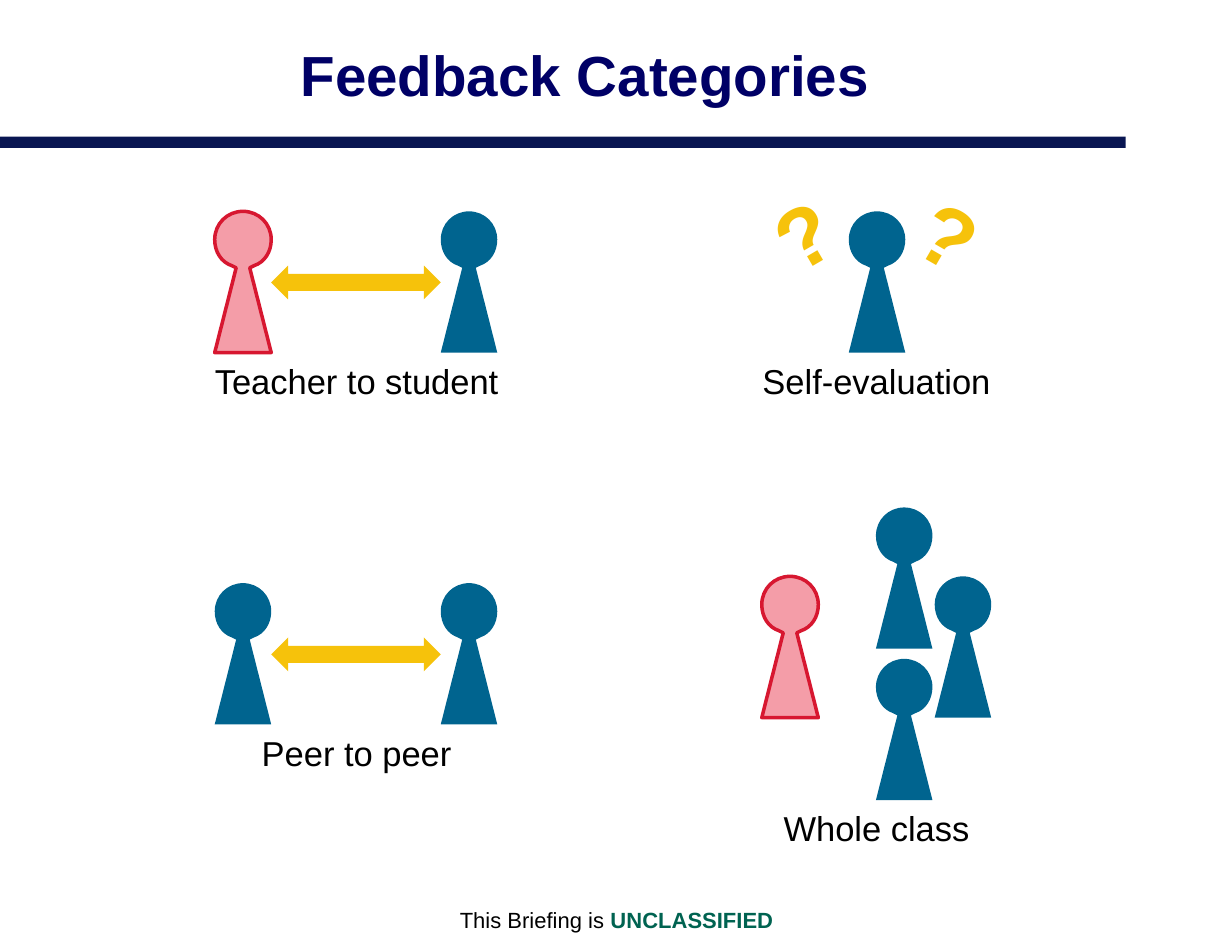
import lxml.etree
import pptx
import pptx.util
import pptx.dml.color
import pptx.enum.shapes
import pptx.enum.text
import pptx.oxml.ns

Inches = pptx.util.Inches
Pt = pptx.util.Pt
qn = pptx.oxml.ns.qn
SHAPE = pptx.enum.shapes.MSO_SHAPE
CENTER = pptx.enum.text.PP_ALIGN.CENTER

COLORS = {
    "navy": "000066",
    "bar": "091652",
    "gold": "F6C20B",
    "blue": "00648F",
    "pink": "F49DA8",
    "red": "D71730",
    "green": "006351",
    "black": "000000",
}

# Corners of a pawn, clockwise from the top of the head
PAWN = [(0.25, 0), (0.5, 0.25), (0.35, 0.48), (0.31, 0.5), (0.5, 1.25),
        (0, 1.25), (0.19, 0.5), (0.15, 0.48), (0, 0.25), (0.25, 0)]
# Control points of the curved steps of the head
CURVES = {
    0: [(0.39, 0), (0.5, 0.11)],
    1: [(0.5, 0.36), (0.44, 0.45)],
    7: [(0.06, 0.45), (0, 0.36)],
    8: [(0, 0.11), (0.11, 0)],
}


def color(name):
    return pptx.dml.color.RGBColor.from_string(COLORS[name])


def set_font(font, size, name, bold=False):
    font.name = "Arial"
    font.size = Pt(size)
    font.bold = bold
    font.color.rgb = color(name)


def paint(shape, fill, line=None):
    shape.shadow.inherit = False
    shape.fill.solid()
    shape.fill.fore_color.rgb = color(fill)
    if line:
        shape.line.color.rgb = color(line)
        shape.line.width = Pt(2.25)
    else:
        shape.line.fill.background()


def add_block(shapes, kind, left, top, width, height, fill):
    shape = shapes.add_shape(
        kind, Inches(left), Inches(top), Inches(width), Inches(height))
    paint(shape, fill)


def add_text(shapes, left, top, width, height, wrap=True):
    box = shapes.add_textbox(
        Inches(left), Inches(top), Inches(width), Inches(height))
    box.text_frame.word_wrap = wrap
    para = box.text_frame.paragraphs[0]
    para.alignment = CENTER
    return box, para


def add_label(shapes, left, top, text):
    para = add_text(shapes, left, top, 2.91, 0.47)[1]
    para.text = text
    set_font(para.font, 22, "black")


def bend(shape):
    # Turn the straight steps of the head into curves
    steps = list(shape._element.iter(qn("a:lnTo")))
    for index, points in CURVES.items():
        step = steps[index]
        curve = lxml.etree.Element(qn("a:cubicBezTo"))
        for x, y in points:
            lxml.etree.SubElement(
                curve, qn("a:pt"), x=str(Inches(x)), y=str(Inches(y)))
        curve.append(step[0])
        step.getparent().replace(step, curve)


def add_pawn(shapes, left, top, fill="blue", line=None):
    points = [(Inches(left + x), Inches(top + y)) for x, y in PAWN]
    pen = shapes.build_freeform(*points[0])
    pen.add_line_segments(points[1:], close=True)
    shape = pen.convert_to_shape()
    bend(shape)
    paint(shape, fill, line)


def add_teacher(shapes, left, top):
    add_pawn(shapes, left, top, "pink", "red")


def add_pair(shapes, top, first, text):
    add_block(shapes, SHAPE.LEFT_RIGHT_ARROW, 2.4, top + 0.48, 1.5, 0.3, "gold")
    add_pawn(shapes, 3.9, top)
    first(shapes, 1.9, top)
    add_label(shapes, 1.7, top + 1.27, text)


def add_query(shapes, left, top, turn):
    box, para = add_text(shapes, left, top, 0.66, 1.01, wrap=False)
    box.rotation = turn
    para.text = "?"
    set_font(para.font, 54, "gold", True)


def add_title(slide, text):
    title = slide.shapes.title
    title.left, title.top = Inches(1.13), Inches(0)
    title.width, title.height = Inches(8.09), Inches(1.3)
    title.text_frame.vertical_anchor = pptx.enum.text.MSO_ANCHOR.MIDDLE
    para = title.text_frame.paragraphs[0]
    para.text = text
    para.alignment = CENTER
    set_font(para.font, 36, "navy", True)


def add_footer(shapes):
    para = add_text(shapes, 2.75, 7.97, 5.41, 0.33)[1]
    for text, name, bold in (("This Briefing is ", "black", False),
                             ("UNCLASSIFIED", "green", True)):
        run = para.add_run()
        run.text = text
        set_font(run.font, 14, name, bold)


def main():
    deck = pptx.Presentation()
    deck.slide_width, deck.slide_height = Inches(10.9), Inches(8.3)
    slide = deck.slides.add_slide(deck.slide_layouts[5])
    shapes = slide.shapes

    # Frame of the slide
    add_block(shapes, SHAPE.RECTANGLE, 0, 1.21, 9.96, 0.1, "bar")
    add_footer(shapes)
    add_title(slide, "Feedback Categories")

    # Pairs on the left
    for top, first, text in ((1.87, add_teacher, "Teacher to student"),
                             (5.16, add_pawn, "Peer to peer")):
        add_pair(shapes.add_group_shape().shapes, top, first, text)

    # Student alone
    solo = shapes.add_group_shape().shapes
    add_label(solo, 6.3, 3.14, "Self-evaluation")
    add_pawn(solo, 7.51, 1.87)
    add_query(solo, 6.78, 1.56, -30.2)
    add_query(solo, 8.07, 1.57, 30)

    # Teacher with the class
    group = shapes.add_group_shape().shapes
    add_pawn(group, 7.75, 4.49)
    add_teacher(group, 6.74, 5.1)
    add_pawn(group, 8.27, 5.1)
    add_pawn(group, 7.75, 5.83)
    add_label(group, 6.3, 7.09, "Whole class")

    deck.save("out.pptx")


if __name__ == "__main__":
    main()
